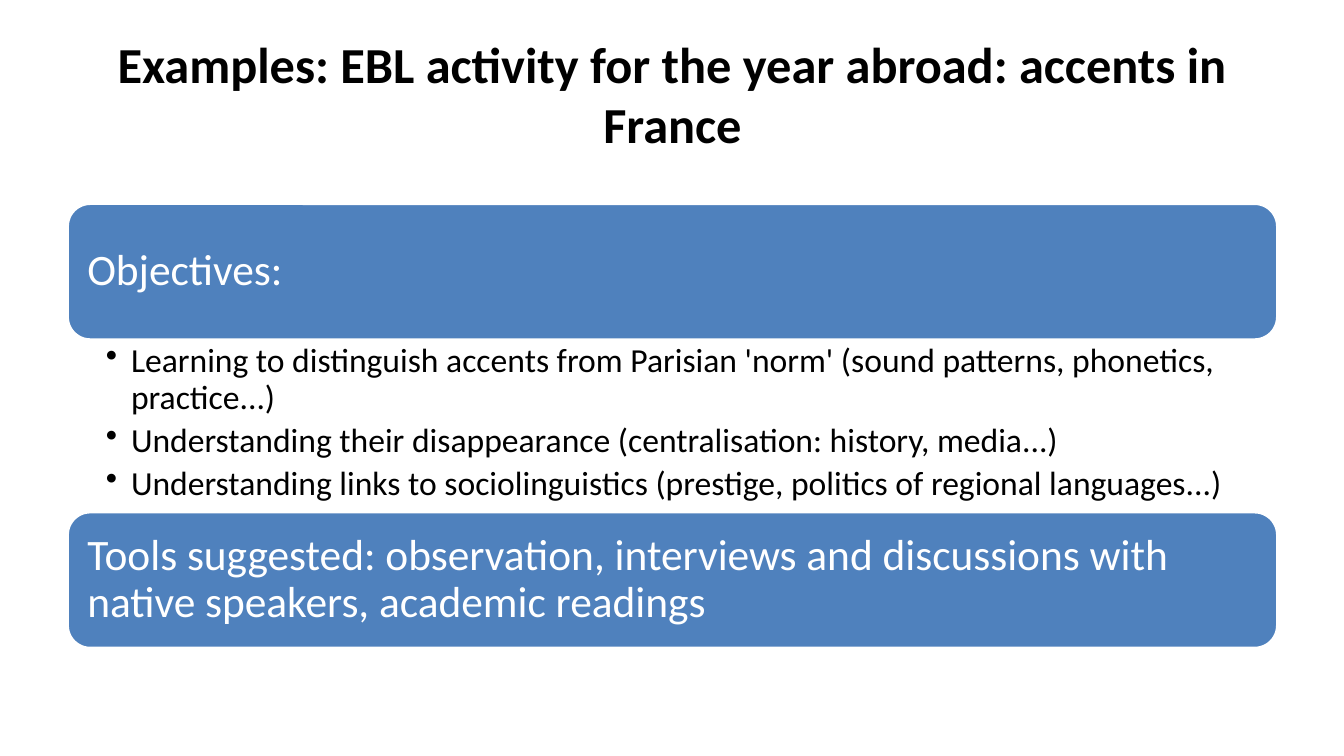
from lxml import etree
from pptx import Presentation
from pptx.dml.color import RGBColor
from pptx.enum.shapes import MSO_SHAPE
from pptx.enum.text import MSO_ANCHOR, MSO_AUTO_SIZE, PP_ALIGN
from pptx.oxml.ns import qn
from pptx.util import Inches, Pt

ROUNDED = MSO_SHAPE.ROUNDED_RECTANGLE
MIDDLE, TOP = MSO_ANCHOR.MIDDLE, MSO_ANCHOR.TOP
LEFT, CENTER = PP_ALIGN.LEFT, PP_ALIGN.CENTER
COLORS = {"black": "000000", "white": "FFFFFF", "blue": "4F81BD"}
MARGIN, CONTENT_WIDTH = Inches(0.67), Inches(12)

BANNERS = [
    (2.02, "Objectives:"),
    (5.08, "Tools suggested: observation, interviews and discussions with "
           "native speakers, academic readings"),
]
OBJECTIVES = [
    "Learning to distinguish accents from Parisian 'norm' (sound patterns, phonetics, practice...)",
    "Understanding their disappearance (centralisation: history, media...)",
    "Understanding links to sociolinguistics (prestige, politics of regional languages...)",
]


def set_frame(frame, anchor, left, top, right, bottom):
    """Set wrapping, anchor and insets (in inches) of a text frame."""
    frame.word_wrap = True
    frame.auto_size = MSO_AUTO_SIZE.NONE
    frame.vertical_anchor = anchor
    frame.margin_left, frame.margin_top = Inches(left), Inches(top)
    frame.margin_right, frame.margin_bottom = Inches(right), Inches(bottom)


def write(paragraph, text, size, color, alignment=LEFT, spacing=0.9):
    paragraph.text = text
    paragraph.alignment = alignment
    paragraph.line_spacing = spacing
    paragraph.font.name = "Calibri"
    paragraph.font.size = Pt(size)
    paragraph.font.color.rgb = RGBColor.from_string(COLORS[color])


presentation = Presentation()
presentation.slide_width = Inches(13.33)
presentation.slide_height = Inches(7.5)
slide = presentation.slides.add_slide(presentation.slide_layouts[5])

# Title
title = slide.shapes.title
title.left, title.top = MARGIN, Inches(0.3)
title.width, title.height = CONTENT_WIDTH, Inches(1.25)
set_frame(title.text_frame, MIDDLE, 0.1, 0.05, 0.1, 0.05)
title_paragraph = title.text_frame.paragraphs[0]
write(title_paragraph, "Examples: EBL activity for the year abroad: accents in France",
      36, "black", CENTER, 1.0)
title_paragraph.font.bold = True

# Blue banners
for top, text in BANNERS:
    banner = slide.shapes.add_shape(ROUNDED, MARGIN, Inches(top), CONTENT_WIDTH, Inches(1.35))
    banner.shadow.inherit = False
    banner.fill.solid()
    banner.fill.fore_color.rgb = RGBColor.from_string(COLORS["blue"])
    banner.line.color.rgb = RGBColor.from_string(COLORS["white"])
    banner.line.width = Pt(2)
    set_frame(banner.text_frame, MIDDLE, 0.13, 0.13, 0.13, 0.13)
    write(banner.text_frame.paragraphs[0], text, 31, "white")

# Bulleted objectives
objectives = slide.shapes.add_textbox(MARGIN, Inches(3.37), CONTENT_WIDTH, Inches(1.72))
frame = objectives.text_frame
set_frame(frame, TOP, 0.38, 0.04, 0.24, 0.04)
for index, text in enumerate(OBJECTIVES):
    paragraph = frame.add_paragraph() if index else frame.paragraphs[0]
    write(paragraph, text, 24, "black")
    paragraph.level = 1
    paragraph.space_after = Pt(4.8)
    properties = paragraph._p.get_or_add_pPr()
    properties.set("marL", str(Inches(0.25)))
    properties.set("indent", str(Inches(-0.25)))
    bullet = etree.Element(qn("a:buChar"), char="•")
    properties.find(qn("a:spcAft")).addnext(bullet)

presentation.save("out.pptx")
